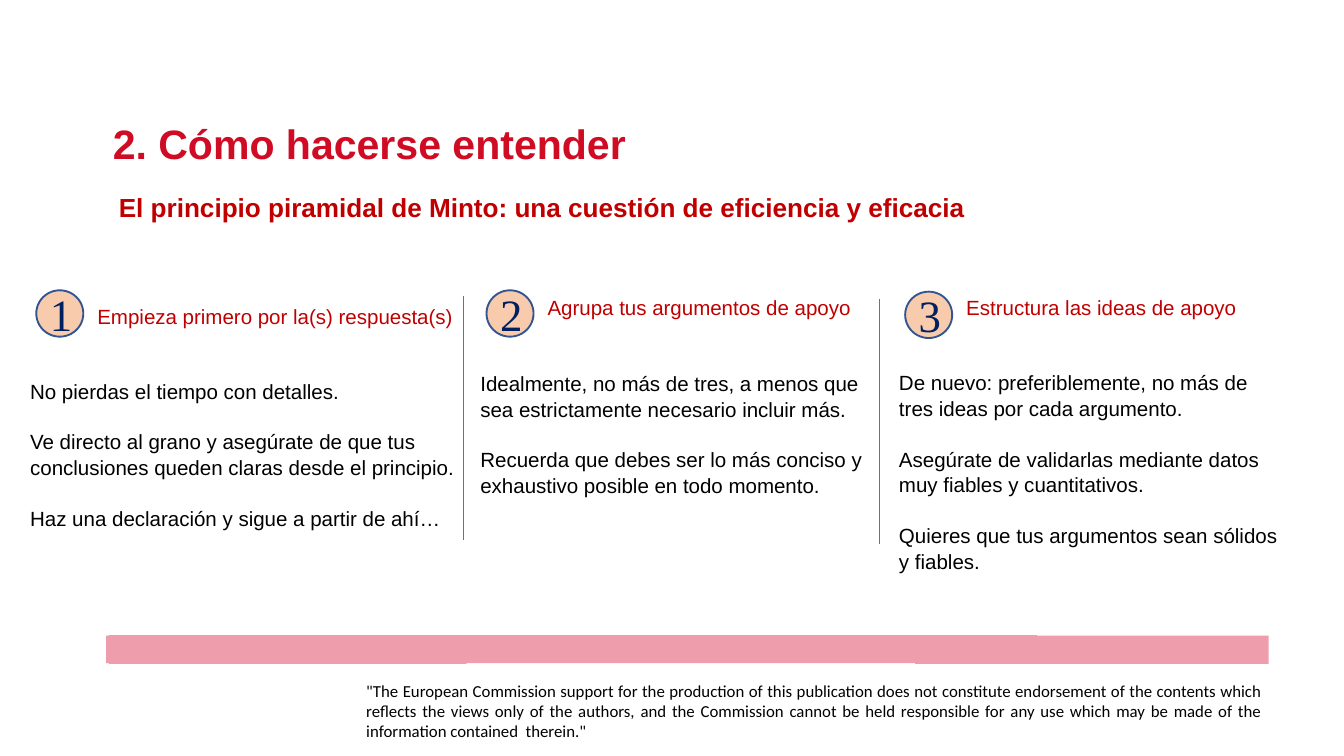
from lxml.etree import SubElement
from pptx import Presentation
from pptx.dml.color import RGBColor
from pptx.enum.shapes import MSO_CONNECTOR as CONNECTOR, MSO_SHAPE as SHAPE
from pptx.enum.text import MSO_ANCHOR as ANCHOR, PP_ALIGN as ALIGN
from pptx.oxml.ns import qn
from pptx.util import Pt

PX = 9144
TITLE_RED, RED, BLACK = "D00B24", "C00000", "000000"
PINK, PEACH, BLUE, NAVY, ORANGE = "ED9DAB", "F8CBAD", "325491", "002060", "C55A11"
BODY_SIZE, LINE_SPACING, BLANK_LINE = 22, 1.05, 26.5

COLUMNS = [
    (35, 432, 675, 343, 13, "Empieza primero por la(s) respuesta(s)", [
        "No pierdas el tiempo con detalles.",
        "Ve directo al grano y asegúrate de que tus conclusiones queden claras desde el principio.",
        "Haz una declaración y sigue a partir de ahí…"]),
    (705, 432, 590, 306, 1, "Agrupa tus argumentos de apoyo", [
        "Idealmente, no más de tres, a menos que sea estrictamente necesario incluir más.",
        "Recuerda que debes ser lo más conciso y exhaustivo posible en todo momento."]),
    (1328, 434, 590, 417, -2, "Estructura las ideas de apoyo", [
        "De nuevo: preferiblemente, no más de tres ideas por cada argumento.",
        "Asegúrate de validarlas mediante datos muy fiables y cuantitativos.",
        "Quieres que tus argumentos sean sólidos y fiables."]),
]
DIVIDERS = [(690, 440, 364), (1309, 445, 365)]
DISCLAIMER = (
    "\"The European Commission support for the production of this publication does not "
    "constitute endorsement of the contents which reflects the views only of the authors, "
    "and the Commission cannot be held responsible for any use which may be made of the "
    "information contained  therein.\"")


def color(value):
    """Turn a hex string into a colour."""
    return RGBColor.from_string(value)


def emu(*lengths):
    """Turn px lengths into EMU."""
    return [length * PX for length in lengths]


def style(paragraph, size, value, name="Arial", bold=False):
    """Set the font of every run in a paragraph."""
    for run in paragraph.runs:
        run.font.size, run.font.name, run.font.bold = Pt(size), name, bold
        run.font.color.rgb = color(value)


def add_text(slide, left, top, width, height, text):
    """Add a wrapping text box and return its text frame."""
    frame = slide.shapes.add_textbox(*emu(left, top, width, height)).text_frame
    frame.word_wrap = True
    frame.text = text
    return frame


def add_heading(slide, left, top, width, height, text, size, value):
    """Add a bold one-line heading."""
    frame = add_text(slide, left, top, width, height, text)
    style(frame.paragraphs[0], size, value, bold=True)


def add_badge(slide, left, top, number):
    """Add a numbered circle."""
    shape = slide.shapes.add_shape(SHAPE.OVAL, *emu(left, top, 70, 69))
    shape.shadow.inherit = False
    shape.fill.solid()
    shape.fill.fore_color.rgb = color(PEACH)
    shape.line.color.rgb = color(BLUE)
    shape.line.width = Pt(2)
    frame = shape.text_frame
    frame.vertical_anchor = ANCHOR.MIDDLE
    frame.text = str(number)
    paragraph = frame.paragraphs[0]
    paragraph.alignment = ALIGN.CENTER
    style(paragraph, 48, NAVY, "Times New Roman")


def add_column(slide, left, top, width, height, text_drop, number, heading, points):
    """Add a numbered column with an indented heading above its points."""
    frame = add_text(slide, left, top + text_drop, width, height, "\n".join([heading, *points]))
    for index, paragraph in enumerate(frame.paragraphs):
        paragraph.line_spacing = LINE_SPACING
        if index:
            paragraph.space_before = Pt(BLANK_LINE * (2 if index == 1 else 1))
        style(paragraph, BODY_SIZE, BLACK if index else RED)
    frame.paragraphs[0]._p.get_or_add_pPr().set("marL", str(100 * PX))
    add_badge(slide, left + 19, top, number)


def add_divider(slide, left, top, height):
    """Add a thin vertical line between two columns."""
    line = slide.shapes.add_connector(
        CONNECTOR.STRAIGHT, *emu(left, top, left, top + height))
    line.line.color.rgb = color(ORANGE)
    line.line.width = Pt(0.75)
    SubElement(line._element.spPr, qn("a:effectLst"))


def add_footer(slide, left, top, width, height):
    """Add the uneven pink band and the disclaimer below it."""
    right, bottom = left + width, top + height
    corners = [
        (right, top + 1), (left + 1385, top + 1), (left + 1385, top), (left + 4, top),
        (left + 4, top + 1), (left, top + 1), (left, bottom - 1), (left + 4, bottom - 1),
        (left + 4, bottom), (left + 536, bottom), (left + 536, bottom - 1),
        (left + 1204, bottom - 1), (left + 1204, bottom), (right, bottom)]
    builder = slide.shapes.build_freeform(*corners[0], scale=PX)
    builder.add_line_segments(corners[1:], close=True)
    band = builder.convert_to_shape()
    band.shadow.inherit = False
    band.fill.solid()
    band.fill.fore_color.rgb = color(PINK)
    band.line.fill.background()

    frame = add_text(slide, left + 387, top + 70, 1333, 76, DISCLAIMER)
    frame.margin_left = frame.margin_right = frame.margin_top = frame.margin_bottom = 0
    paragraph = frame.paragraphs[0]
    paragraph.alignment = ALIGN.JUSTIFY
    paragraph.line_spacing = 0.98
    style(paragraph, 18, BLACK, "Calibri")


def main():
    """Build and save the slide."""
    presentation = Presentation()
    presentation.slide_width, presentation.slide_height = emu(2000, 1125)
    slide = presentation.slides.add_slide(presentation.slide_layouts[6])
    add_footer(slide, 158, 945, 1730, 43)
    add_heading(slide, 158, 172, 1420, 84, "2. Cómo hacerse entender", 44, TITLE_RED)
    add_heading(slide, 167, 280, 1442, 151,
                "El principio piramidal de Minto: una cuestión de eficiencia y eficacia", 28, RED)
    for number, (*box, heading, points) in enumerate(COLUMNS, start=1):
        add_column(slide, *box, number, heading, points)
    for divider in DIVIDERS:
        add_divider(slide, *divider)
    presentation.save("out.pptx")


if __name__ == "__main__":
    main()
